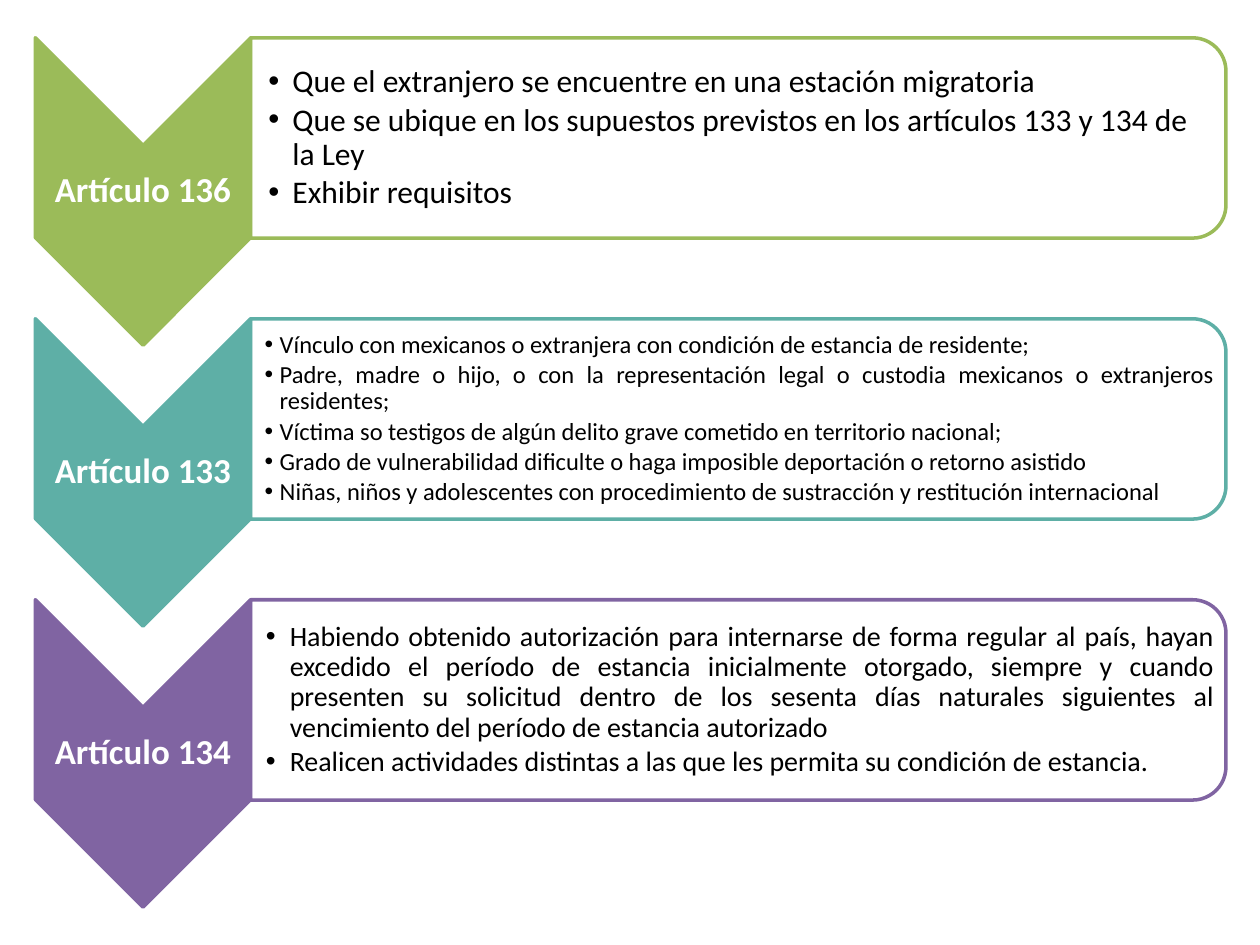
from dataclasses import dataclass

from lxml import etree
from pptx import Presentation
from pptx.dml import color as dml
from pptx.enum import shapes as sh, text as tx
from pptx.oxml import ns
from pptx.util import Inches, Pt


@dataclass(frozen=True)
class Theme:
    """Colours, font and sizes shared by the slide."""

    font: str = "Calibri"
    white: str = "FFFFFF"
    black: str = "000000"
    green: str = "9BBB59"
    teal: str = "5EAFA6"
    purple: str = "8064A2"
    label_size: int = 20
    large: int = 18
    medium: int = 16
    small: int = 14
    outline: int = 2


@dataclass(frozen=True)
class Article:
    """One article with its requirements and list layout."""

    label: str
    accent: str
    size: int
    inset: float
    indent: float
    align: tx.PP_ALIGN
    requirements: tuple


THEME = Theme()
TOP, PITCH = 0.3, 2.23
LEFT, ARROW_WIDTH, ARROW_HEIGHT = 0.28, 1.71, 2.44
PANEL_LEFT, PANEL_WIDTH, PANEL_HEIGHT = 1.99, 7.74, 1.59

ARTICLES = (
    Article("Artículo 136", THEME.green, THEME.large, 0.14, 0.19, tx.PP_ALIGN.LEFT, (
        "Que el extranjero se encuentre en una estación migratoria",
        "Que se ubique en los supuestos previstos en los artículos 133 y 134 de la Ley",
        "Exhibir requisitos",
    )),
    Article("Artículo 133", THEME.teal, THEME.small, 0.11, 0.12, tx.PP_ALIGN.JUSTIFY, (
        "Vínculo con mexicanos o extranjera con condición de estancia de residente;",
        "Padre, madre o hijo, o con la representación legal o custodia mexicanos o "
        "extranjeros residentes;",
        "Víctima so testigos de algún delito grave cometido en territorio nacional;",
        "Grado de vulnerabilidad dificulte o haga imposible deportación o retorno asistido",
        "Niñas, niños y adolescentes con procedimiento de sustracción y restitución "
        "internacional",
    )),
    Article("Artículo 134", THEME.purple, THEME.medium, 0.12, 0.19, tx.PP_ALIGN.JUSTIFY, (
        "Habiendo obtenido autorización para internarse de forma regular al país, hayan "
        "excedido el período de estancia inicialmente otorgado, siempre y cuando presenten "
        "su solicitud dentro de los sesenta días naturales siguientes al vencimiento del "
        "período de estancia autorizado",
        "Realicen actividades distintas a las que les permita su condición de estancia.",
    )),
)


def rgb(value):
    """Return a colour from its hex value."""
    return dml.RGBColor.from_string(value)


def add_turned_shape(slide, preset, left, top, width, height, fill, line):
    """Add a preset turned a quarter clockwise that covers the given box."""
    shift = (width - height) / 2
    turned = slide.shapes.add_shape(
        preset, Inches(left + shift), Inches(top - shift), Inches(height), Inches(width))
    turned.rotation = 90
    turned.shadow.inherit = False
    turned.fill.solid()
    turned.fill.fore_color.rgb = rgb(fill)
    turned.line.color.rgb = rgb(line)
    turned.line.width = Pt(THEME.outline)
    return turned


def set_opacity(panel, percent):
    """Make the fill of a panel partly transparent."""
    fill_color = panel.element.spPr.find(f"{ns.qn('a:solidFill')}/{ns.qn('a:srgbClr')}")
    etree.SubElement(fill_color, ns.qn("a:alpha"), val=str(percent * 1000))


def set_frame(frame, left_inset):
    """Set wrapping, centring and insets of a text frame."""
    frame.word_wrap = True
    frame.auto_size = tx.MSO_AUTO_SIZE.NONE
    frame.vertical_anchor = tx.MSO_ANCHOR.MIDDLE
    frame.margin_left = Inches(left_inset)
    frame.margin_top = frame.margin_right = frame.margin_bottom = Inches(0.01)


def format_paragraph(paragraph, size, color, bold, align, gap):
    """Set the spacing of a paragraph and the font of its runs."""
    paragraph.alignment = align
    paragraph.line_spacing = 0.9
    paragraph.space_before = Pt(0)
    paragraph.space_after = Pt(gap * size)
    for run in paragraph.runs:
        run.font.name = THEME.font
        run.font.size = Pt(size)
        run.font.bold = bold
        run.font.color.rgb = rgb(color)


def set_bullet(paragraph, indent):
    """Give a paragraph a round bullet with a hanging indent."""
    properties = paragraph._p.get_or_add_pPr()
    properties.set("marL", str(Inches(indent)))
    properties.set("indent", str(-Inches(indent)))
    etree.SubElement(properties, ns.qn("a:buChar"), char="•")


def add_label(slide, article, top):
    """Write the article name on its arrow."""
    label = slide.shapes.add_textbox(
        Inches(LEFT), Inches(top + 0.85), Inches(ARROW_WIDTH), Inches(0.73))
    set_frame(label.text_frame, 0.01)
    label.text_frame.text = article.label
    format_paragraph(label.text_frame.paragraphs[0], THEME.label_size, THEME.white,
                     True, tx.PP_ALIGN.CENTER, 0)


def fill_requirements(slide, body, article, top):
    """Place a body placeholder over its panel and list the requirements."""
    slide.shapes.element.append(body.element)
    body.left, body.top = Inches(PANEL_LEFT), Inches(top + 0.08)
    body.width, body.height = Inches(7.66), Inches(1.43)
    set_frame(body.text_frame, article.inset)
    body.text_frame.text = "\n".join(article.requirements)
    for requirement in body.text_frame.paragraphs:
        requirement.level = 1
        format_paragraph(requirement, article.size, THEME.black, False, article.align, 0.15)
        set_bullet(requirement, article.indent)


def add_article(slide, body, article, top):
    """Build the arrow, label, panel and list of one article."""
    add_turned_shape(slide, sh.MSO_SHAPE.CHEVRON, LEFT, top,
                     ARROW_WIDTH, ARROW_HEIGHT, article.accent, article.accent)
    add_label(slide, article, top)
    panel = add_turned_shape(slide, sh.MSO_SHAPE.ROUND_2_SAME_RECTANGLE, PANEL_LEFT, top,
                             PANEL_WIDTH, PANEL_HEIGHT, THEME.white, article.accent)
    set_opacity(panel, 90)
    fill_requirements(slide, body, article, top)


def main():
    """Build and save the slide."""
    deck = Presentation()
    deck.slide_width, deck.slide_height = Inches(10), Inches(7.5)
    slide = deck.slides.add_slide(deck.slide_layouts.get_by_name("Comparison"))
    title, *bodies = slide.placeholders
    for row, (body, article) in enumerate(zip(bodies, ARTICLES)):
        add_article(slide, body, article, TOP + row * PITCH)
    for unused in (title, *bodies[len(ARTICLES):]):
        slide.shapes.element.remove(unused.element)
    deck.save("out.pptx")


if __name__ == "__main__":
    main()
